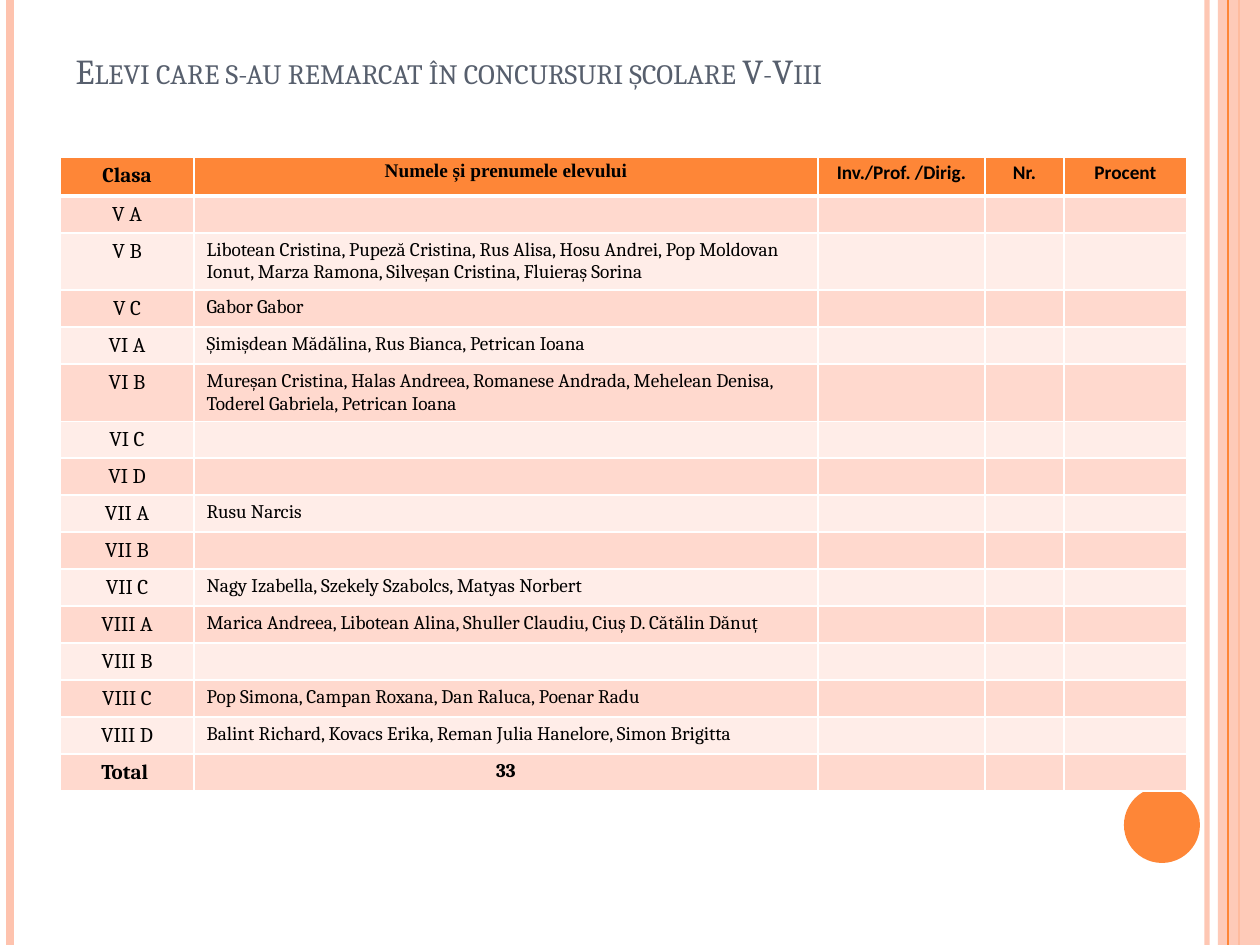
import pptx
import pptx.dml.color
import pptx.enum.shapes
import pptx.enum.text
import pptx.oxml.ns
import pptx.util
from lxml import etree

PX = 914400 / 126
COLORS = {"white": "FFFFFF", "black": "000000", "title": "575F6D", "orange": "FE8637",
          "peach": "FEC3AE", "band_dark": "FFD9CE", "band_light": "FFEDE8"}
rgb = {name: pptx.dml.color.RGBColor.from_string(code) for name, code in COLORS.items()}
qn = pptx.oxml.ns.qn
ALIGN = pptx.enum.text.PP_ALIGN


def write_text(frame, text, size=12, font="Cambria", color="black", bold=False,
               align=ALIGN.LEFT, spacing=None):
    para = frame.paragraphs[0]
    para.alignment = align
    para.line_spacing = spacing
    if not text:
        # An empty cell still needs a size, or its row grows
        etree.SubElement(para._p, qn("a:endParaRPr"), sz=str(size * 100))
        return None
    span = para.add_run()
    span.text = text
    span.font.size = pptx.util.Pt(size)
    span.font.name = font
    span.font.bold = bold
    span.font.color.rgb = rgb[color]
    return span


def set_opacity(shape, percent):
    color = shape._element.spPr.find(".//" + qn("a:srgbClr"))
    etree.SubElement(color, qn("a:alpha"), val=str(percent * 1000))


deck = pptx.Presentation()
deck.slide_width, deck.slide_height = round(1260 * PX), round(945 * PX)
page = deck.slides.add_slide(deck.slide_layouts[5])

# Side stripes, back to front: x, colour, width in points, opacity
stripes = [(1207, "peach", 3, 93), (10, "peach", 4.5, 100),
           (1239, "orange", 1.5, 100), (1228, "orange", 0.75, 100)]
for x, color, width, opacity in stripes:
    if x == 1228:
        panel = page.shapes.add_shape(pptx.enum.shapes.MSO_SHAPE.RECTANGLE, round(1218 * PX), 0,
                                      round(42 * PX), deck.slide_height)
        panel.shadow.inherit = False
        panel.fill.solid()
        panel.fill.fore_color.rgb = rgb["peach"]
        panel.line.fill.background()
        set_opacity(panel, 87)
    stripe = page.shapes.add_connector(pptx.enum.shapes.MSO_CONNECTOR.STRAIGHT,
                                       round(x * PX), 0, round(x * PX), deck.slide_height)
    stripe.line.color.rgb = rgb[color]
    stripe.line.width = pptx.util.Pt(width)
    etree.SubElement(stripe._element.spPr, qn("a:effectLst"))
    if opacity < 100:
        set_opacity(stripe, opacity)

disc = page.shapes.add_shape(pptx.enum.shapes.MSO_SHAPE.OVAL, round(1124 * PX), round(787 * PX),
                             round(76 * PX), round(76 * PX))
disc.shadow.inherit = False
disc.fill.solid()
disc.fill.fore_color.rgb = rgb["orange"]
disc.line.fill.background()

title = page.shapes.title
title.left, title.top, title.width, title.height = (round(n * PX) for n in (63, 38, 1128, 60))
title.text_frame.word_wrap = True
title.text_frame.auto_size = pptx.enum.text.MSO_AUTO_SIZE.NONE
title.text_frame.vertical_anchor = pptx.enum.text.MSO_ANCHOR.BOTTOM
heading = write_text(title.text_frame, "Elevi care s-au remarcat în concursuri școlare V-Viii",
                     size=20, color="title")
heading.font._element.set("cap", "small")

headers = [("Clasa", "Cambria"), ("Numele și prenumele elevului", "Times New Roman"),
           ("Inv./Prof. /Dirig.", "Calibri"), ("Nr.", "Calibri"), ("Procent", "Calibri")]
classes = [
    ("V A", ""),
    ("V B", "Libotean Cristina, Pupeză Cristina, Rus Alisa, Hosu Andrei, Pop Moldovan Ionut, "
            "Marza Ramona, Silveșan Cristina, Fluieraș Sorina"),
    ("V C", "Gabor Gabor"),
    ("VI A", "Șimișdean Mădălina, Rus Bianca, Petrican Ioana"),
    ("VI B", "Mureșan Cristina, Halas Andreea, Romanese Andrada, Mehelean Denisa, "
             "Toderel Gabriela, Petrican Ioana"),
    ("VI C", ""),
    ("VI D", ""),
    ("VII A", "Rusu Narcis"),
    ("VII B", ""),
    ("VII C", "Nagy Izabella, Szekely Szabolcs, Matyas Norbert"),
    ("VIII A", "Marica Andreea, Libotean Alina, Shuller Claudiu, Ciuș D. Cătălin Dănuț"),
    ("VIII B", ""),
    ("VIII C", "Pop Simona, Campan Roxana, Dan Raluca, Poenar Radu"),
    ("VIII D", "Balint Richard, Kovacs Erika, Reman Julia Hanelore, Simon Brigitta"),
    ("Total ", "33"),
]
widths = [134, 624, 167, 79, 123]
heights = [39] + [57 if len(names) > 80 else 37 for label, names in classes]
table = page.shapes.add_table(len(heights), len(widths), round(60 * PX), round(157 * PX),
                              round(sum(widths) * PX), round(sum(heights) * PX)).table
for column, width in zip(table.columns, widths):
    column.width = round(width * PX)
for row, height in zip(table.rows, heights):
    row.height = round(height * PX)

for r in range(len(heights)):
    for c in range(len(widths)):
        cell = table.cell(r, c)
        props = cell._tc.get_or_add_tcPr()
        for side in "LRTB":
            thick = (r, side) in ((0, "B"), (1, "T"))
            border = etree.SubElement(props, qn("a:ln" + side), w="38100" if thick else "12700")
            fill = etree.SubElement(border, qn("a:solidFill"))
            etree.SubElement(fill, qn("a:srgbClr"), val=COLORS["white"])
        cell.fill.solid()
        band = "band_dark" if r % 2 else "band_light"
        cell.fill.fore_color.rgb = rgb["orange" if r == 0 else band]
        if r == 0:
            text, font = headers[c]
            if c > 0:
                cell.margin_left = cell.margin_right = round(9 * PX)
                cell.margin_top = cell.margin_bottom = 0
            write_text(cell.text_frame, text, size=11 if c else 12, font=font, bold=True,
                       align=ALIGN.CENTER, spacing=1.15 if c else None)
        else:
            is_total = r == len(classes)
            text = classes[r - 1][c] if c < 2 else ""
            write_text(cell.text_frame, text, size=11 if c else 12, bold=is_total,
                       align=ALIGN.CENTER if c == 0 or is_total else ALIGN.LEFT)

deck.save("out.pptx")
